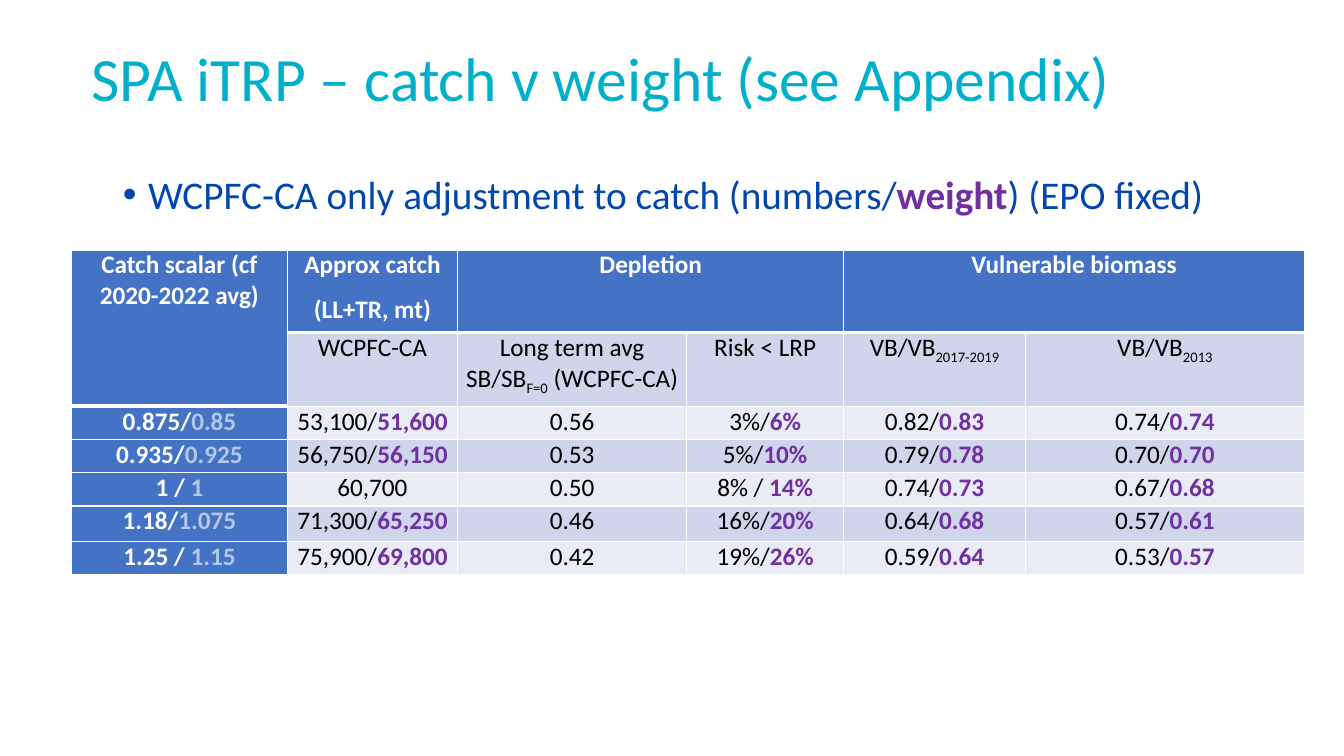
import pptx
import pptx.dml.color
import pptx.enum.text
import pptx.oxml
import pptx.oxml.ns
import pptx.util
from pptx.util import Inches

FONT = "Calibri"
WHITE, BLACK, PURPLE = "FFFFFF", "000000", "7030A0"
HEADER_BLUE, PALE_BLUE = "4472C4", "B4C7E7"
BANDS = ("E9EBF5", "CFD5EA")
CENTER = pptx.enum.text.PP_ALIGN.CENTER

COLUMN_WIDTHS = (2.14, 1.69, 2.27, 1.56, 1.8, 2.77)
ROW_HEIGHTS = (0.82, 0.73, 0.33, 0.33, 0.33, 0.35, 0.33)
MERGES = ((0, 0, 1, 0), (0, 2, 0, 3), (0, 4, 0, 5))

# Odd parts between bars are subscripts in headings and accents elsewhere.
CATCH_ROWS = (
    ("Catch scalar (cf 2020-2022 avg)", "Approx catch\n(LL+TR, mt)", "Depletion", "",
     "Vulnerable biomass", ""),
    ("", "WCPFC-CA", "Long term avg SB/SB|F=0| (WCPFC-CA)", "Risk < LRP",
     "VB/VB|2017-2019", "VB/VB|2013"),
    ("0.875/|0.85", "53,100/|51,600", "0.56", "3%/|6%", "0.82/|0.83", "0.74/|0.74"),
    ("0.935/|0.925", "56,750/|56,150", "0.53", "5%/|10%", "0.79/|0.78", "0.70/|0.70"),
    ("1 / |1", "60,700", "0.50", "8% / |14%", "0.74/|0.73", "0.67/|0.68"),
    ("1.18/|1.075", "71,300/|65,250", "0.46", "16%/|20%", "0.64/|0.68", "0.57/|0.61"),
    ("1.25 / |1.15", "75,900/|69,800", "0.42", "19%/|26%", "0.59/|0.64", "0.53/|0.57"),
)


def rgb(color):
    return pptx.dml.color.RGBColor.from_string(color)


def add_run(paragraph, text, size, color, bold=False):
    run = paragraph.add_run()
    run.text = text
    run.font.name = FONT
    run.font.size = pptx.util.Pt(size)
    run.font.color.rgb = rgb(color)
    run.font.bold = bold
    return run


def add_text_line(slide, left, top, width, height):
    frame = slide.shapes.add_textbox(
        Inches(left), Inches(top), Inches(width), Inches(height)).text_frame
    frame.word_wrap = True
    line = frame.paragraphs[0]
    line.line_spacing = 0.9
    return line


def add_title(slide, left, top, width, height):
    line = add_text_line(slide, left, top, width, height)
    add_run(line, "SPA iTRP – catch v weight (see Appendix)", 44, "00B0CA")


def add_adjustment_bullet(slide, left, top, width, height):
    line = add_text_line(slide, left, top, width, height)
    properties = line._p.get_or_add_pPr()
    properties.set("marL", str(Inches(0.25)))
    properties.set("indent", str(-Inches(0.25)))
    namespace = pptx.oxml.ns.nsdecls("a")
    properties.append(pptx.oxml.parse_xml(f'<a:buFont {namespace} typeface="Arial"/>'))
    properties.append(pptx.oxml.parse_xml(f'<a:buChar {namespace} char="•"/>'))
    add_run(line, "WCPFC-CA only adjustment to catch (numbers/", 28, "0046AD")
    add_run(line, "weight", 28, PURPLE, True)
    add_run(line, ") (EPO fixed)", 28, "0046AD")


def add_borders(cell, row, column):
    heavy_row = 1 if column == 0 else 0
    widths = {"L": 1, "R": 1,
              "T": 3 if row == heavy_row + 1 else 1,
              "B": 3 if row == heavy_row else 1}
    properties = cell._tc.get_or_add_tcPr()
    for side, width in widths.items():
        properties.append(pptx.oxml.parse_xml(
            f'<a:ln{side} {pptx.oxml.ns.nsdecls("a")} w="{pptx.util.Pt(width)}">'
            f'<a:solidFill><a:srgbClr val="{WHITE}"/></a:solidFill></a:ln{side}>'))


def fill_cell(cell, row, column, text):
    heading = row == 0 or column == 0
    cell.margin_left = cell.margin_right = Inches(0.07)
    cell.margin_top = cell.margin_bottom = 0
    add_borders(cell, row, column)
    cell.fill.solid()
    cell.fill.fore_color.rgb = rgb(HEADER_BLUE if heading else BANDS[row % 2])
    if not text:
        return
    frame = cell.text_frame
    for line_number, line in enumerate(text.split("\n")):
        paragraph = frame.add_paragraph() if line_number else frame.paragraphs[0]
        paragraph.alignment = CENTER
        paragraph.space_after = pptx.util.Pt(10)
        for part_number, part in enumerate(line.split("|")):
            marked = part_number % 2 == 1
            color = WHITE if heading else BLACK
            accented = marked and row > 1
            if accented:
                color = PALE_BLUE if heading else PURPLE
            run = add_run(paragraph, part, 18, color, heading or accented)
            if marked and row == 1:
                run.font._element.set("baseline", "-25000")


def add_catch_table(slide, left, top, width, height):
    table = slide.shapes.add_table(
        len(ROW_HEIGHTS), len(COLUMN_WIDTHS),
        Inches(left), Inches(top), Inches(width), Inches(height)).table
    table.first_row = table.horz_banding = False
    for column, column_width in zip(table.columns, COLUMN_WIDTHS):
        column.width = Inches(column_width)
    for row, row_height in zip(table.rows, ROW_HEIGHTS):
        row.height = Inches(row_height)
    for first_row, first_column, last_row, last_column in MERGES:
        table.cell(first_row, first_column).merge(table.cell(last_row, last_column))
    for row, texts in enumerate(CATCH_ROWS):
        for column, text in enumerate(texts):
            fill_cell(table.cell(row, column), row, column, text)


def main():
    deck = pptx.Presentation()
    deck.slide_width, deck.slide_height = Inches(13.33), Inches(7.5)
    slide = deck.slides.add_slide(deck.slide_layouts[6])
    add_catch_table(slide, 0.71, 2.48, 12.23, 3.37)
    add_title(slide, 0.81, 0.43, 11.5, 1.1)
    add_adjustment_bullet(slide, 1.12, 1.69, 11.5, 0.79)
    deck.save("out.pptx")


if __name__ == "__main__":
    main()
